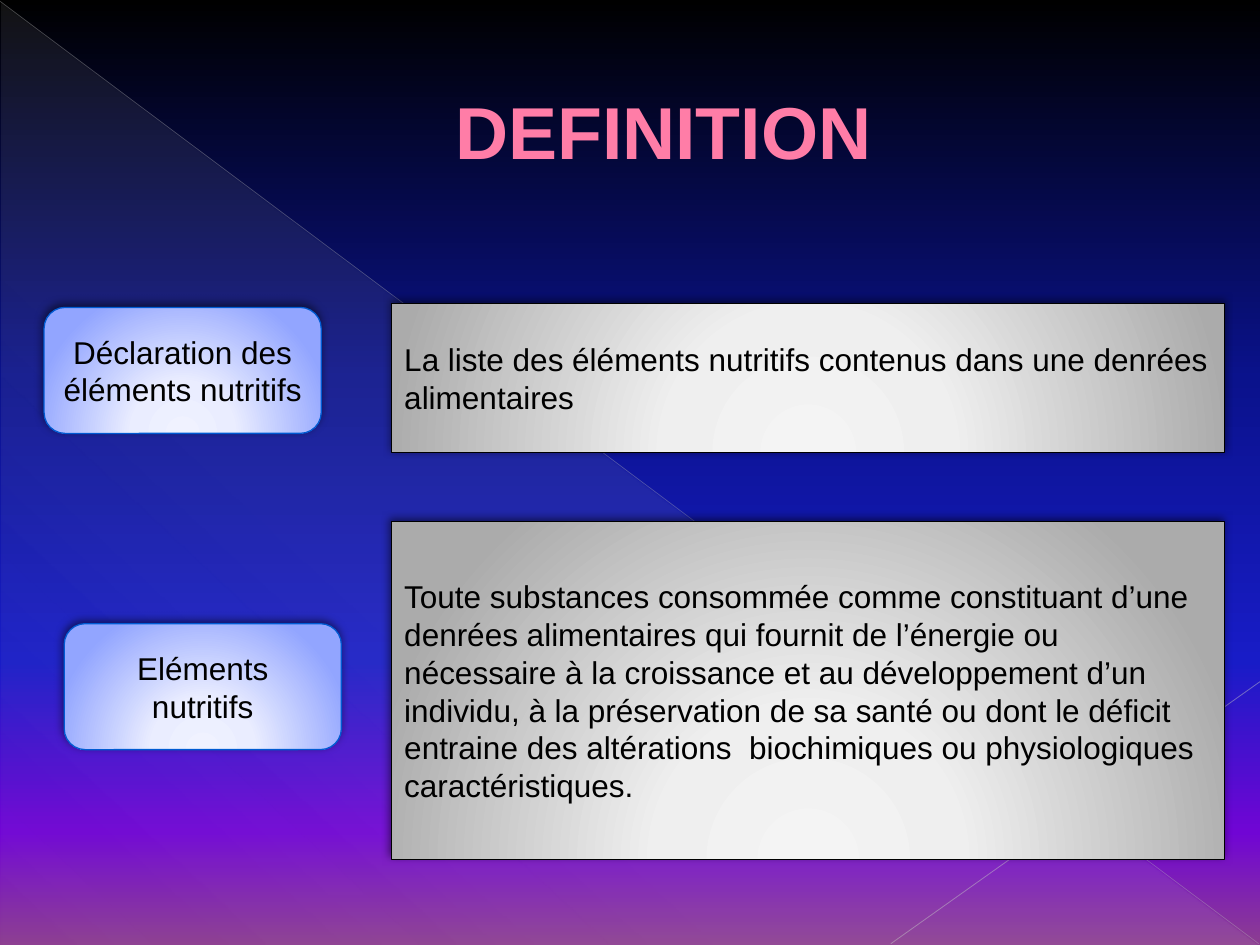
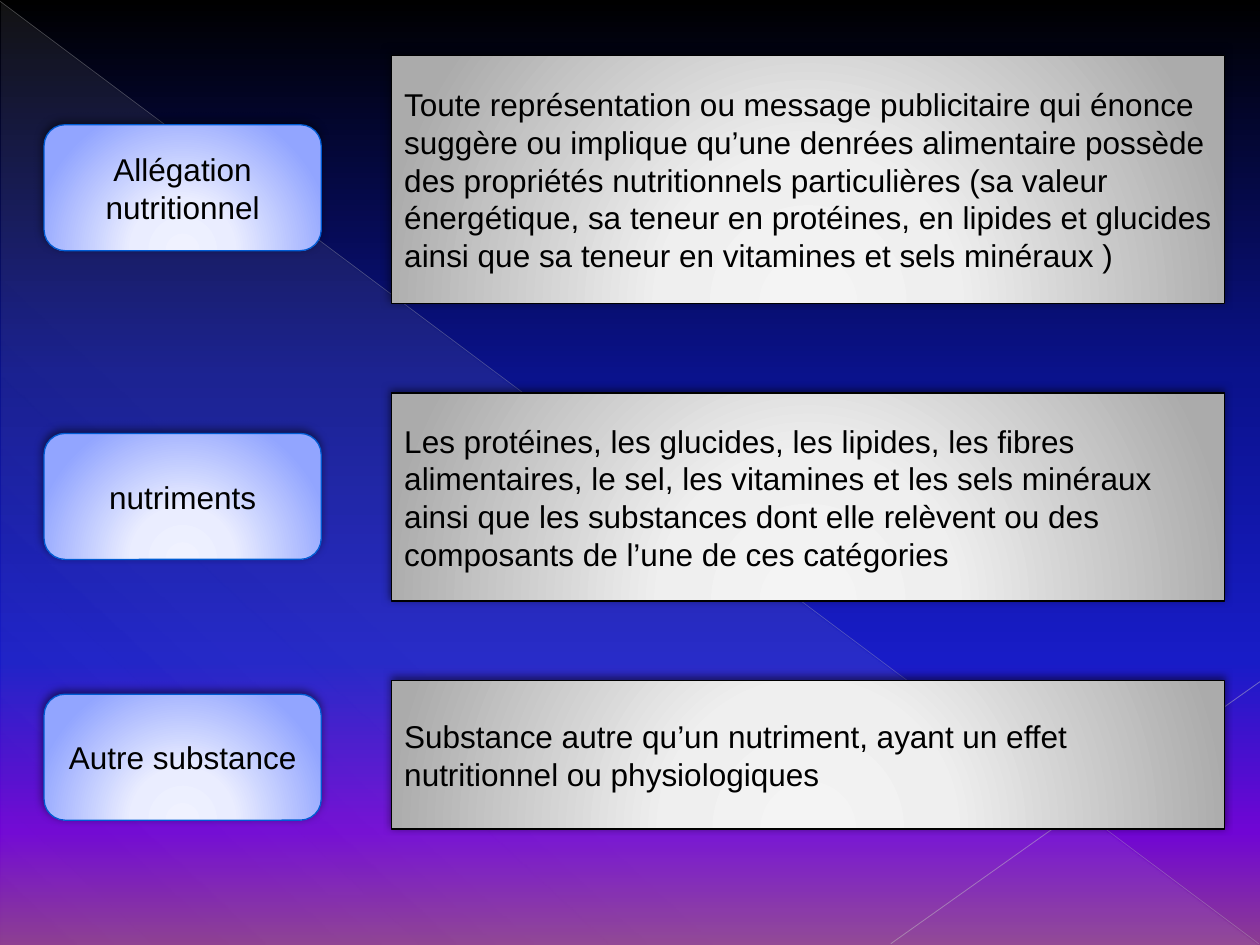
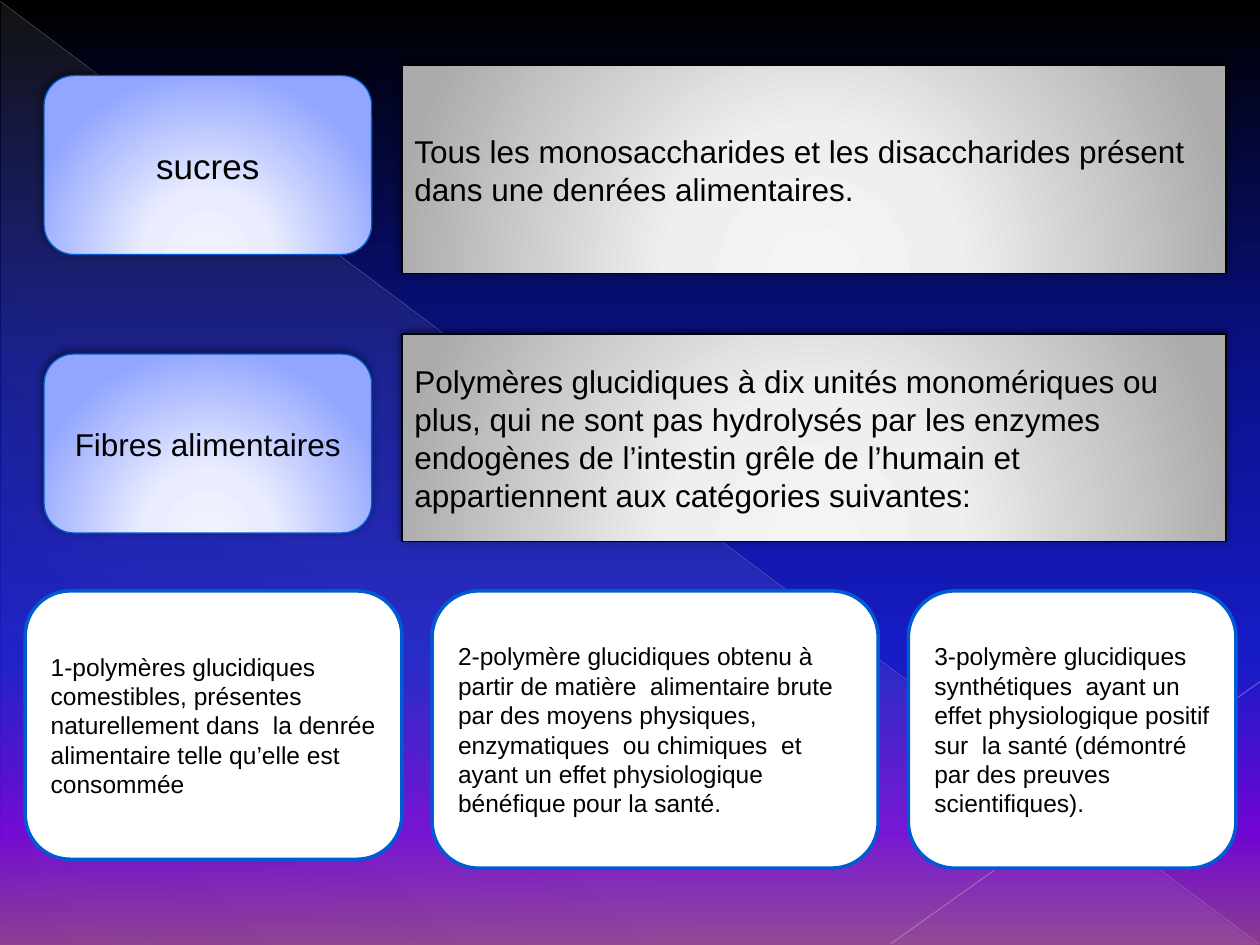
from dataclasses import dataclass

from lxml.etree import SubElement
from pptx import Presentation
from pptx.dml.color import RGBColor
from pptx.enum.shapes import MSO_CONNECTOR, MSO_SHAPE
from pptx.enum.text import MSO_ANCHOR, PP_ALIGN
from pptx.oxml.ns import qn
from pptx.util import Inches, Pt


# Shared look: gradients are lists of (position %, colour, opacity %)
@dataclass(frozen=True)
class Theme:
    font: str = "Arial"
    title_size: int = 42
    body_size: int = 18
    large_size: int = 20
    card_size: int = 14
    text: str = "000000"
    title: str = "FF7DA7"
    title_outline: str = "B12761"
    blue: str = "005BD3"
    black: str = "000000"
    white: str = "FFFFFF"
    background: tuple = ((0, "000000", 100), (40, "0A128C", 100), (70, "181CC7", 100),
                         (88, "7005D4", 100), (100, "8C3D91", 100))
    veil: tuple = ((0, "D2D2D2", 10), (70, "D2D2D2", 8), (100, "D2D2D2", 1))
    label_fill: tuple = ((0, "F0F2FF", 100), (34, "EAEDFF", 100), (100, "92A5FF", 100))
    panel_fill: tuple = ((0, "F4F4F4", 100), (34, "EFEFEF", 100), (100, "ABABAB", 100))


T = Theme()
LABEL_X = 0.35
LABEL_SIZE = (2.2, 1)
PANEL_X, PANEL_W = 3.11, 6.61


# XML helpers
def add_color(parent, color, opacity=100):
    clr = SubElement(parent, qn("a:srgbClr"), val=color)
    if opacity < 100:
        SubElement(clr, qn("a:alpha"), val=str(opacity * 1000))


def set_gradient(fill, props, stops, angle=None):
    """Linear gradient at an angle, or a circular one centred below the shape."""
    fill.solid()
    solid = props.find(qn("a:solidFill"))
    grad = props.makeelement(qn("a:gradFill"), {"rotWithShape": "1"})
    gs_lst = SubElement(grad, qn("a:gsLst"))
    for pos, color, opacity in stops:
        add_color(SubElement(gs_lst, qn("a:gs"), pos=str(pos * 1000)), color, opacity)
    if angle is None:
        circle = SubElement(grad, qn("a:path"), path="circle")
        SubElement(circle, qn("a:fillToRect"), l="50000", t="155000", r="50000", b="-55000")
    else:
        SubElement(grad, qn("a:lin"), ang=str(angle * 60000), scaled="0")
    props.replace(solid, grad)


def add_shadow(sp):
    effects = sp._element.spPr.find(qn("a:effectLst"))
    shadow = SubElement(effects, qn("a:outerShdw"), blurRad=str(Pt(5)), dist=str(Pt(2)),
                        dir=str(245 * 60000), algn="ctr", rotWithShape="0")
    add_color(shadow, T.black, 50)


# Elements
def add_run(p, text, size, color):
    r = p.add_run()
    r.text = text
    r.font.name = T.font
    r.font.size = Pt(size)
    r.font.color.rgb = RGBColor.from_string(color)
    return r


def add_box(slide, kind, box, text, size, line, line_width, align=PP_ALIGN.LEFT):
    sp = slide.shapes.add_shape(kind, *map(Inches, box))
    sp.shadow.inherit = False
    sp.line.color.rgb = RGBColor.from_string(line)
    sp.line.width = Pt(line_width)
    tf = sp.text_frame
    tf.word_wrap = True
    tf.vertical_anchor = MSO_ANCHOR.MIDDLE
    p = tf.paragraphs[0]
    p.alignment = align
    add_run(p, text, size, T.text)
    return sp


def add_label(slide, x, y, text, extent=LABEL_SIZE, size=T.body_size):
    sp = add_box(slide, MSO_SHAPE.ROUNDED_RECTANGLE, (x, y, *extent), text, size,
                 T.blue, 0.75, PP_ALIGN.CENTER)
    set_gradient(sp.fill, sp._element.spPr, T.label_fill)
    add_shadow(sp)


def add_panel(slide, y, height, text, x=PANEL_X, width=PANEL_W):
    sp = add_box(slide, MSO_SHAPE.RECTANGLE, (x, y, width, height), text, T.body_size,
                 T.black, 0.75)
    set_gradient(sp.fill, sp._element.spPr, T.panel_fill)
    add_shadow(sp)


def add_card(slide, box, text):
    sp = add_box(slide, MSO_SHAPE.ROUNDED_RECTANGLE, box, text, T.card_size, T.blue, 2)
    sp.fill.solid()
    sp.fill.fore_color.rgb = RGBColor.from_string(T.white)


def add_thin_line(slide, start, end, color, width, opacity):
    line = slide.shapes.add_connector(MSO_CONNECTOR.STRAIGHT, *map(Inches, start + end))
    line.line.color.rgb = RGBColor.from_string(color)
    line.line.width = Pt(width)
    clr = line._element.spPr.find(".//" + qn("a:srgbClr"))
    SubElement(clr, qn("a:alpha"), val=str(opacity * 1000))
    SubElement(line._element.spPr, qn("a:effectLst"))
    return line


def set_title(slide, text):
    title = slide.shapes.title
    title.left, title.top, title.width, title.height = map(Inches, (0.5, 0.44, 9, 1.18))
    tf = title.text_frame
    tf.vertical_anchor = MSO_ANCHOR.MIDDLE
    p = tf.paragraphs[0]
    p.alignment = PP_ALIGN.CENTER
    p_pr = p._p.get_or_add_pPr()
    p_pr.set("marL", str(Inches(0.53)))
    p_pr.set("indent", "0")
    r = add_run(p, text, T.title_size, T.title)
    r.font.bold = True
    r_pr = r._r.get_or_add_rPr()
    outline = r_pr.makeelement(qn("a:ln"), {"w": str(Pt(0.5))})
    add_color(SubElement(outline, qn("a:solidFill")), T.title_outline)
    r_pr.insert(0, outline)


def style_master(prs, slide):
    """Draw the backdrop on a slide, then move it to the back of the master."""
    master = prs.slide_master
    fill = master.background.fill
    fill.solid()
    set_gradient(fill, master._element.find(".//" + qn("p:bgPr")), T.background, 90)

    veil = slide.shapes.add_shape(MSO_SHAPE.RIGHT_TRIANGLE,
                                  *map(Inches, (0.01, 0.02, 9.98, 7.48)))
    veil.shadow.inherit = False
    veil.line.fill.background()
    set_gradient(veil.fill, veil._element.spPr, T.veil, 133)
    backdrop = [
        veil,
        add_thin_line(slide, (0, 0.01), (9.99, 7.49), "BFBFBF", 0.39, 35),
        add_thin_line(slide, (10, 5.41), (7.07, 7.49), "C6C6C6", 0.47, 45),
    ]
    for i, sp in enumerate(backdrop):
        sp._element.find(".//" + qn("p:cNvPr")).set("id", str(101 + i))
        master.shapes._spTree.insert(2 + i, sp._element)


# Slides
def build_definition(slide):
    set_title(slide, "DEFINITION")
    add_label(slide, LABEL_X, 2.44, "Déclaration des éléments nutritifs")
    add_label(slide, 0.51, 4.95, "Eléments nutritifs")
    add_panel(slide, 2.41, 1.18,
              "La liste des éléments nutritifs contenus dans une denrées alimentaires")
    add_panel(slide, 4.14, 2.68,
              "Toute substances consommée comme constituant d’une denrées alimentaires qui "
              "fournit de l’énergie ou nécessaire à la croissance et au développement d’un "
              "individu, à la préservation de sa santé ou dont le déficit entraine des "
              "altérations  biochimiques ou physiologiques caractéristiques.")


def build_nutrients(slide):
    rows = [
        (0.99, "Allégation nutritionnel", 0.44, 1.97,
         "Toute représentation ou message publicitaire qui énonce suggère ou implique "
         "qu’une denrées alimentaire possède des propriétés nutritionnels particulières "
         "(sa valeur énergétique, sa teneur en protéines, en lipides et glucides ainsi "
         "que sa teneur en vitamines et sels minéraux )"),
        (3.44, "nutriments", 3.12, 1.65,
         "Les protéines, les glucides, les lipides, les fibres alimentaires, le sel, les "
         "vitamines et les sels minéraux ainsi que les substances dont elle relèvent ou "
         "des composants de l’une de ces catégories"),
        (5.51, "Autre substance", 5.4, 1.18,
         "Substance autre qu’un nutriment, ayant un effet nutritionnel ou physiologiques"),
    ]
    for label_y, term, panel_y, height, meaning in rows:
        add_label(slide, LABEL_X, label_y, term)
        add_panel(slide, panel_y, height, meaning)


def build_sugars_and_fibres(slide):
    rows = [
        (0.6, "sucres", T.large_size, 0.52,
         "Tous les monosaccharides et les disaccharides présent dans une denrées "
         "alimentaires."),
        (2.81, "Fibres alimentaires", T.body_size, 2.65,
         "Polymères glucidiques à dix unités monomériques ou plus, qui ne sont pas "
         "hydrolysés par les enzymes endogènes de l’intestin grêle de l’humain et "
         "appartiennent aux catégories suivantes:"),
    ]
    for label_y, term, size, panel_y, meaning in rows:
        add_label(slide, LABEL_X, label_y, term, (2.6, 1.42), size)
        add_panel(slide, panel_y, 1.65, meaning, 3.19, 6.54)

    # Fibre categories, left to right
    cards = [
        (2.99, 2.13, "1-polymères glucidiques comestibles, présentes naturellement dans  "
                     "la denrée alimentaire telle qu’elle est consommée"),
        (3.54, 2.2, "2-polymère glucidiques obtenu à partir de matière  alimentaire brute  "
                    "par des moyens physiques, enzymatiques  ou chimiques  et ayant un "
                    "effet physiologique bénéfique pour la santé."),
        (2.6, 2.2, "3-polymère glucidiques  synthétiques  ayant un effet physiologique "
                   "positif sur  la santé (démontré par des preuves scientifiques)."),
    ]
    x, gap = 0.2, 0.24
    for width, height, text in cards:
        add_card(slide, (x, 4.69, width, height), text)
        x += width + gap


def main():
    prs = Presentation()
    prs.slide_width, prs.slide_height = Inches(10), Inches(7.5)
    title_only, blank = prs.slide_layouts[5], prs.slide_layouts[6]

    first = prs.slides.add_slide(title_only)
    style_master(prs, first)
    build_definition(first)
    build_nutrients(prs.slides.add_slide(blank))
    build_sugars_and_fibres(prs.slides.add_slide(blank))
    prs.save("out.pptx")


if __name__ == "__main__":
    main()
